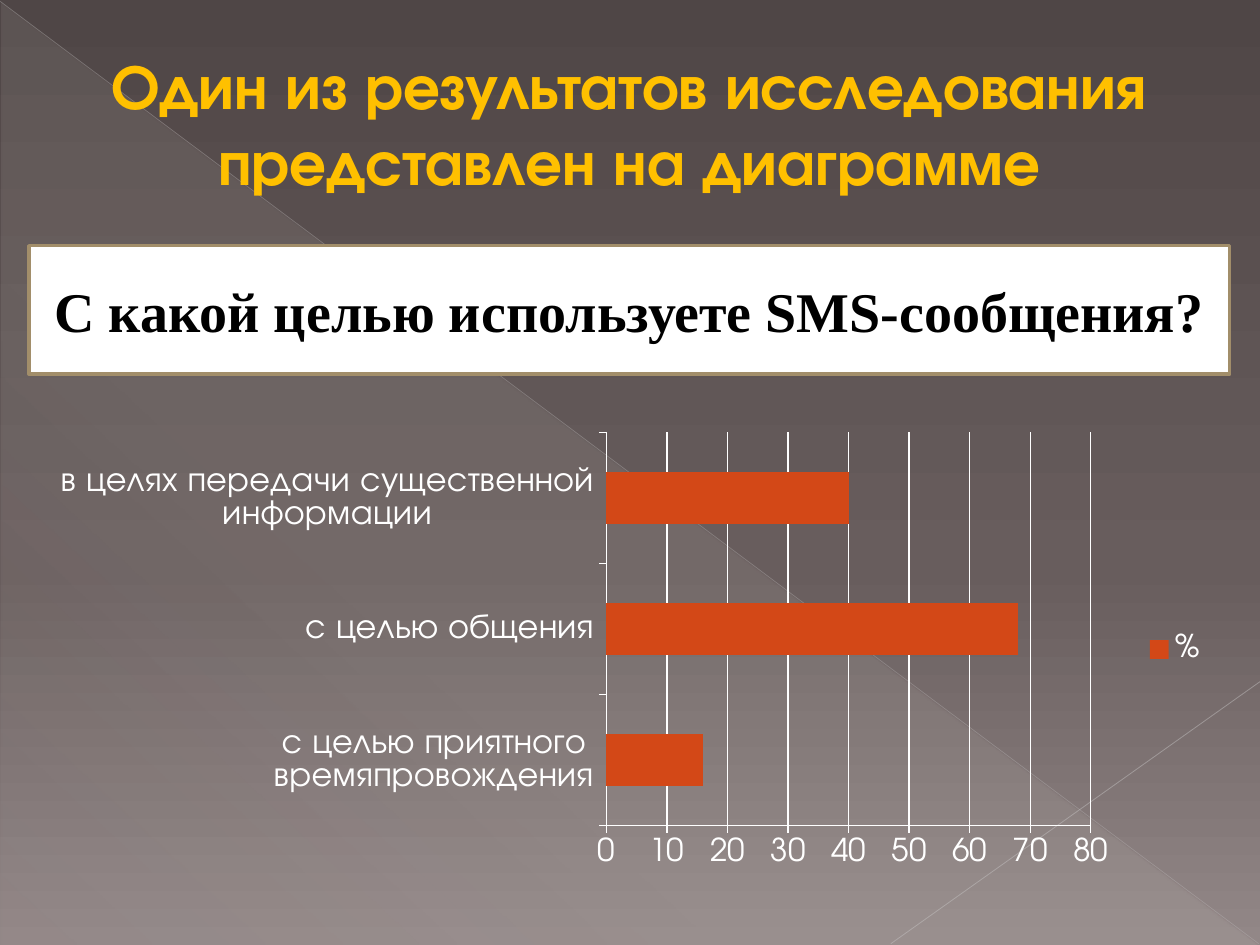
import pptx
import pptx.util
import pptx.dml.color
import pptx.chart.data
import pptx.enum.chart
import pptx.enum.shapes
import pptx.enum.text
import pptx.oxml
from lxml import etree
from pptx.util import Inches

NS = ('xmlns:a="http://schemas.openxmlformats.org/drawingml/2006/main" '
      'xmlns:c="http://schemas.openxmlformats.org/drawingml/2006/chart"')
FONT = "TeX Gyre Adventor"
SHAPE = pptx.enum.shapes.MSO_SHAPE
TICK = pptx.enum.chart.XL_TICK_MARK


def rgb(code):
    return pptx.dml.color.RGBColor.from_string(code)


def blend(root, stops, angle):
    """Give the first gradient under root its (place, colour, opacity) stops."""
    grad = root.xpath(".//a:gradFill")[0]
    marks = "".join(
        f'<a:gs pos="{place * 1000}"><a:srgbClr val="{code}">'
        f'<a:alpha val="{alpha * 1000}"/></a:srgbClr></a:gs>'
        for place, code, alpha in stops)
    for child in list(grad):
        grad.remove(child)
    grad.append(pptx.oxml.parse_xml(f"<a:gsLst {NS}>{marks}</a:gsLst>"))
    grad.append(pptx.oxml.parse_xml(
        f'<a:lin {NS} ang="{angle * 60000}" scaled="0"/>'))


deck = pptx.Presentation()
deck.slide_width, deck.slide_height = Inches(10), Inches(7.5)
slide = deck.slides.add_slide(deck.slide_layouts[5])
shapes = slide.shapes

# Background, pale triangle and thin diagonals
slide.background.fill.gradient()
blend(slide._element, [(0, "4F4646", 100), (60, "685D5D", 100),
                       (100, "928787", 100)], 90)

wedge = shapes.add_shape(SHAPE.RIGHT_TRIANGLE, Inches(0.01), Inches(0.02),
                         Inches(9.98), Inches(7.48))
wedge.shadow.inherit = False
wedge.line.fill.background()
wedge.fill.gradient()
blend(wedge._element, [(0, "E9E5DC", 10), (70, "E9E5DC", 8),
                       (100, "E9E5DC", 1)], 133)

for ends, code, width, alpha in [
        ((0, 0.01, 9.99, 7.49), "C1BEBE", 0.39, 35),
        ((10, 5.41, 7.07, 7.49), "C7C5C5", 0.47, 45)]:
    line = shapes.add_connector(pptx.enum.shapes.MSO_CONNECTOR.STRAIGHT,
                                *[Inches(n) for n in ends])
    line.line.color.rgb = rgb(code)
    line.line.width = pptx.util.Pt(width)
    tint = line._element.xpath(".//a:ln//a:srgbClr")[0]
    tint.append(pptx.oxml.parse_xml(f'<a:alpha {NS} val="{alpha * 1000}"/>'))
    line._element.spPr.append(pptx.oxml.parse_xml(f"<a:effectLst {NS}/>"))

# Title, brought in front of the background shapes
title = shapes.title
title.left, title.top = Inches(0.23), Inches(0.23)
title.width, title.height = Inches(9.53), Inches(1.48)
shapes._spTree.append(title._element)

# Bar chart
data = pptx.chart.data.CategoryChartData()
data.categories = ["с целью приятного времяпровождения", "с целью общения",
                   "в целях передачи существенной информации"]
data.add_series("%", [16, 68, 40])
chart = shapes.add_chart(
    pptx.enum.chart.XL_CHART_TYPE.BAR_CLUSTERED, Inches(0.31), Inches(3.36),
    Inches(9.38), Inches(3.59), data).chart
chart.has_title = False
chart.has_legend = True
chart.legend.position = pptx.enum.chart.XL_LEGEND_POSITION.RIGHT
chart.legend.include_in_layout = False
chart.font.name, chart.font.size = FONT, pptx.util.Pt(18)
chart.font.color.rgb = rgb("FFFFFF")

plot = chart.plots[0]
plot.gap_width = 150
plot.vary_by_categories = False
bars = plot.series[0].format.fill
bars.solid()
bars.fore_color.rgb = rgb("D34817")

names, scale = chart.category_axis, chart.value_axis
names.tick_labels.font.size = pptx.util.Pt(20)
names.has_major_gridlines = False
scale.has_major_gridlines = True
scale.minimum_scale, scale.maximum_scale, scale.major_unit = 0, 80, 10
names.major_tick_mark = TICK.OUTSIDE
scale.major_tick_mark = TICK.CROSS
for rule in (names, scale, scale.major_gridlines):
    rule.format.line.color.rgb = rgb("FFFFFF")
    rule.format.line.width = pptx.util.Pt(0.75)

area = chart._chartSpace.xpath(".//c:plotArea")[0]
for old in area.xpath("./c:layout"):
    area.remove(old)
frame = {"layoutTarget": "inner", "xMode": "edge", "yMode": "edge",
         "x": 0.48, "y": 0.02, "w": 0.41, "h": 0.87}
parts = "".join(f'<c:{key} val="{val}"/>' for key, val in frame.items())
area.insert(0, pptx.oxml.parse_xml(
    f"<c:layout {NS}><c:manualLayout>{parts}</c:manualLayout></c:layout>"))

# Question box
box = shapes.add_shape(SHAPE.RECTANGLE, Inches(0.23), Inches(1.95),
                       Inches(9.53), Inches(1.02))
box.shadow.inherit = False
box.fill.solid()
box.fill.fore_color.rgb = rgb("FFFFFF")
box.line.color.rgb = rgb("A28E6A")
box.line.width = pptx.util.Pt(2)

for shape, words, code, form in [
        (title, "Один из результатов исследования представлен на диаграмме",
         "FFC000", {"name": FONT, "size": pptx.util.Pt(36), "bold": True}),
        (box, "С какой целью используете SMS-сообщения?", "000000",
         {"name": "Times New Roman", "size": pptx.util.Pt(32), "bold": True})]:
    text = shape.text_frame
    text.text = words
    text.word_wrap = True
    text.vertical_anchor = pptx.enum.text.MSO_ANCHOR.MIDDLE
    para = text.paragraphs[0]
    para.alignment = pptx.enum.text.PP_ALIGN.CENTER
    font = para.runs[0].font
    font.color.rgb = rgb(code)
    for key, val in form.items():
        setattr(font, key, val)

deck.save("out.pptx")
